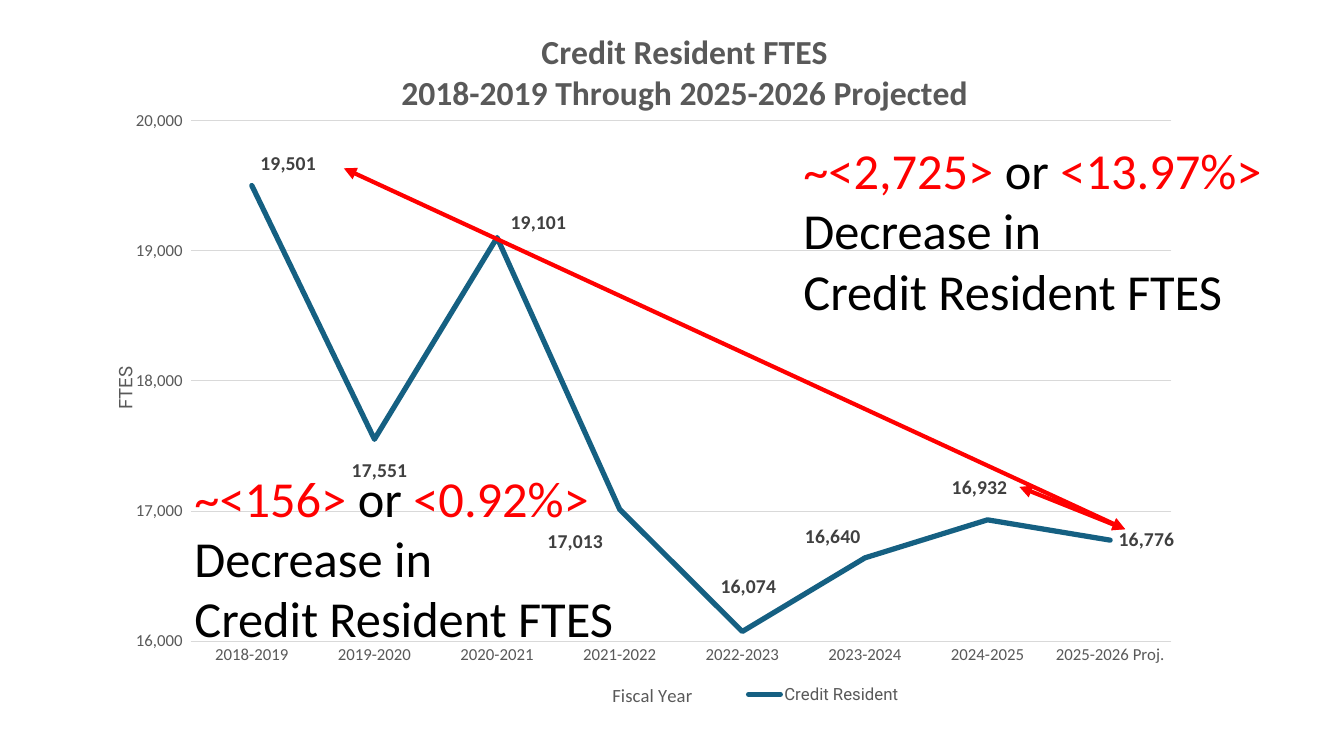
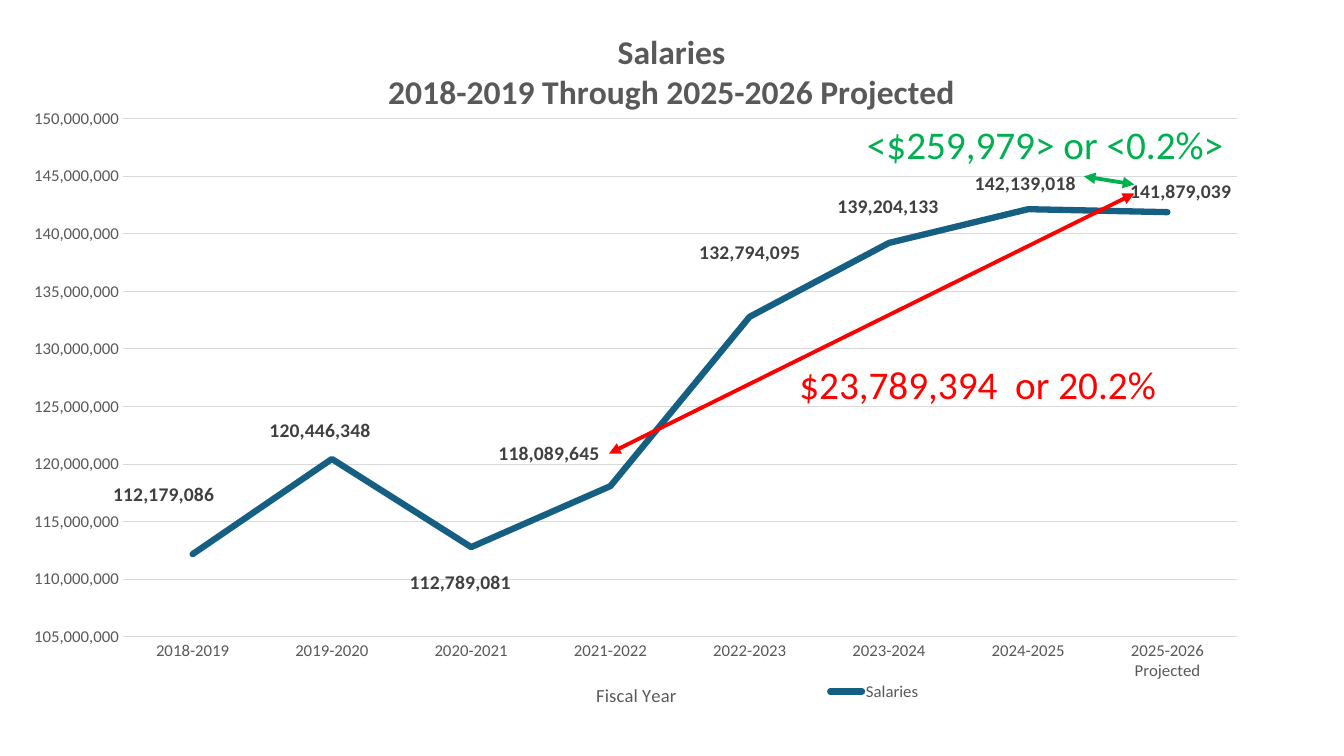
from dataclasses import dataclass

from lxml import etree
from pptx import Presentation
from pptx import util as u
from pptx.chart import data as chart_data
from pptx.dml import color
from pptx.enum import chart as chart_enum, shapes
from pptx.oxml import ns


@dataclass(frozen=True)
class Theme:
    text_font: str = "Calibri"
    chart_font: str = "Roboto"
    series: str = "156082"
    grid: str = "D9D9D9"
    muted: str = "595959"
    label: str = "404040"
    black: str = "000000"
    red: str = "FF0000"
    green: str = "00B050"
    title_size: float = 24
    axis_title_size: float = 13.3
    axis_size: float = 12
    label_size: float = 14


THEME = Theme()
YEARS = [f"{year}-{year + 1}" for year in range(2018, 2025)]
PERIOD = "2018-2019 Through 2025-2026 Projected"


def style_font(font, size, hex_color, name=THEME.text_font, bold=False):
    font.size, font.name, font.bold = u.Pt(size), name, bold
    font.color.rgb = color.RGBColor.from_string(hex_color)


def style_line(line, hex_color, width):
    line.color.rgb = color.RGBColor.from_string(hex_color)
    line.width = u.Pt(width)


def set_layout(parent, **values):
    """Give a chart part a manual layout, in fractions of the chart."""
    for old in parent.findall(ns.qn("c:layout")):
        parent.remove(old)
    layout = etree.Element(ns.qn("c:layout"))
    manual = etree.SubElement(layout, ns.qn("c:manualLayout"))
    for key, value in values.items():
        text = value if isinstance(value, str) else f"{value:.4f}"
        etree.SubElement(manual, ns.qn(f"c:{key}")).set("val", text)
    is_plot = parent.tag == ns.qn("c:plotArea")
    parent.insert(0 if is_plot else 1, layout)


class Deck:
    def __init__(self):
        self.presentation = Presentation()
        self.presentation.slide_width = u.Inches(13.33)
        self.presentation.slide_height = u.Inches(7.5)
        self.slide = None

    def new_slide(self):
        blank = self.presentation.slide_layouts[6]
        self.slide = self.presentation.slides.add_slide(blank)

    def line_chart(self, box, title, categories, name, values, scale, number_format,
                   line_width, label_shifts, places, legend_font=THEME.text_font,
                   value_title=None):
        """Draw the chart; places are in slide inches, label_shifts in inches."""
        source = chart_data.CategoryChartData(number_format=number_format)
        source.categories = categories
        source.add_series(name, values)
        chart = self.slide.shapes.add_chart(
            chart_enum.XL_CHART_TYPE.LINE, *map(u.Inches, box), source).chart
        style_font(chart.font, 10, THEME.black, THEME.chart_font)
        chart.has_title = True
        self.chart_text(chart.chart_title, title, THEME.title_size, bold=True)
        self.axes(chart, scale, number_format, value_title)
        chart.has_legend = True
        chart.legend.position = chart_enum.XL_LEGEND_POSITION.BOTTOM
        chart.legend.include_in_layout = False
        style_font(chart.legend.font, THEME.axis_size, THEME.muted, legend_font)
        self.series(chart, line_width, label_shifts, box)
        self.place_parts(chart, box, places)

    @staticmethod
    def chart_text(owner, lines, size, name=THEME.text_font, bold=False):
        frame = owner.text_frame
        for index, line in enumerate(lines):
            paragraph = frame.add_paragraph() if index else frame.paragraphs[0]
            run = paragraph.add_run()
            run.text = line
            style_font(run.font, size, THEME.muted, name, bold)

    def axes(self, chart, scale, number_format, value_title):
        category, value = chart.category_axis, chart.value_axis
        for axis in (category, value):
            axis.major_tick_mark = chart_enum.XL_TICK_MARK.NONE
            style_font(axis.tick_labels.font, THEME.axis_size, THEME.muted)
        self.chart_text(category.axis_title, ["Fiscal Year"], THEME.axis_title_size)
        style_line(category.format.line, THEME.grid, 0.75)
        value.minimum_scale, value.maximum_scale, value.major_unit = scale
        value.has_major_gridlines = True
        style_line(value.major_gridlines.format.line, THEME.grid, 0.75)
        value.format.line.fill.background()
        value.tick_labels.number_format = number_format
        value.tick_labels.number_format_is_linked = False
        if value_title:
            self.chart_text(value.axis_title, [value_title],
                            THEME.axis_title_size, THEME.chart_font)

    @staticmethod
    def series(chart, line_width, label_shifts, box):
        series = chart.plots[0].series[0]
        series.smooth = False
        series.marker.style = chart_enum.XL_MARKER_STYLE.NONE
        style_line(series.format.line, THEME.series, line_width)
        chart.element.xpath(".//c:ser/c:spPr/a:ln")[0].set("cap", "rnd")
        right = chart_enum.XL_LABEL_POSITION.RIGHT
        labels = series.data_labels
        labels.show_value = True
        labels.position = right
        style_font(labels.font, THEME.label_size, THEME.label, bold=True)
        for index in range(len(label_shifts)):
            label = series.points[index].data_label
            style_font(label.font, THEME.label_size, THEME.label, bold=True)
            label.position = right
        for element, (dx, dy) in zip(chart.element.xpath(".//c:dLbl"), label_shifts):
            set_layout(element, x=dx / box[2], y=dy / box[3])
        for leader_lines in chart.element.xpath(".//c:showLeaderLines"):
            leader_lines.set("val", "0")

    @staticmethod
    def place_parts(chart, box, places):
        left, top, width, height = box
        queries = {"title": "c:chart/c:title", "legend": "c:chart/c:legend",
                   "category": ".//c:catAx/c:title", "value": ".//c:valAx/c:title",
                   "plot": ".//c:plotArea"}
        for part, (x, y, *size) in places.items():
            layout = {"layoutTarget": "inner"} if part == "plot" else {}
            layout.update(xMode="edge", yMode="edge",
                          x=(x - left) / width, y=(y - top) / height)
            if size:
                layout.update(w=size[0] / width, h=size[1] / height)
            set_layout(chart.element.xpath(queries[part])[0], **layout)

    def double_arrow(self, start, end, hex_color, width):
        arrow = self.slide.shapes.add_connector(
            shapes.MSO_CONNECTOR.STRAIGHT, *map(u.Inches, (*start, *end)))
        style_line(arrow.line, hex_color, width)
        properties = arrow.element.spPr
        line = properties.find(ns.qn("a:ln"))
        for end_name in ("headEnd", "tailEnd"):
            etree.SubElement(line, ns.qn(f"a:{end_name}")).set("type", "triangle")
        etree.SubElement(properties, ns.qn("a:effectLst"))

    def note(self, box, size, paragraphs):
        """Add a text box; each paragraph is a list of (text, colour) runs."""
        frame = self.slide.shapes.add_textbox(*map(u.Inches, box)).text_frame
        frame.word_wrap = False
        for index, runs in enumerate(paragraphs):
            paragraph = frame.add_paragraph() if index else frame.paragraphs[0]
            for text, hex_color in runs:
                run = paragraph.add_run()
                run.text = text
                style_font(run.font, size, hex_color)

    def decrease_note(self, box, amount, percent):
        self.note(box, 36, [
            [(f"~<{amount}> ", THEME.red), ("or ", THEME.black),
             (f"<{percent}>", THEME.red)],
            [("Decrease in", THEME.black)],
            [("Credit Resident FTES", THEME.black)]])


def add_enrollment_slide(deck):
    deck.new_slide()
    deck.line_chart(
        (1.08, 0.08, 11.42, 7), ["Credit Resident FTES", PERIOD],
        YEARS + ["2025-2026 Proj."], "Credit Resident",
        [19501, 17551, 19101, 17013, 16074, 16640, 16932, 16776],
        (16000, 20000, 1000), "_(* #,##0_)", 3.75,
        [(0, -0.22), (-0.31, 0.31), (0.05, -0.15), (-0.8, 0.32),
         (-0.3, -0.45), (-0.68, -0.21), (-0.44, -0.32)],
        {"title": (3.95, 0.28), "plot": (1.89, 1.2, 9.73, 5.18),
         "category": (6.04, 6.76), "value": (1.08, 3.61), "legend": (7.37, 6.77)},
        legend_font=THEME.chart_font, value_title="FTES")
    latest = (11.16, 5.25)
    deck.double_arrow((3.41, 1.67), latest, THEME.red, 3)
    deck.decrease_note((7.87, 1.33, 4.9, 1.92), "2,725", "13.97%")
    deck.double_arrow((10.11, 4.83), latest, THEME.red, 3)
    deck.decrease_note((1.83, 4.58, 4.39, 1.92), "156", "0.92%")


def add_salaries_slide(deck):
    deck.new_slide()
    deck.line_chart(
        (0.16, 0.08, 12.98, 7), ["Salaries", PERIOD],
        YEARS + ["2025-2026 Projected"], "Salaries",
        [112179086, 120446348, 112789081, 118089645,
         132794095, 139204133, 142139018, 141879039],
        (105000000, 150000000, 5000000), "#,##0", 4.5,
        [(-0.83, -0.6), (-0.66, -0.28), (-0.65, 0.36), (-1.15, -0.33),
         (-0.54, -0.64), (-0.55, -0.36), (-0.57, -0.26), (-0.41, -0.2)],
        {"title": (3.82, 0.28), "plot": (1.22, 1.19, 11.05, 5.2),
         "category": (5.88, 6.82), "legend": (8.18, 6.8)})
    deck.double_arrow((6.04, 4.5), (11.25, 1.92), THEME.red, 2.75)
    deck.note((7.83, 3.53, 3.79, 0.57), 28, [[("$23,789,394  or 20.2%", THEME.red)]])
    deck.double_arrow((10.75, 1.75), (11.25, 1.83), THEME.green, 2.75)
    deck.note((8.5, 1.14, 3.79, 0.57), 28, [[("<$259,979> or <0.2%>", THEME.green)]])


def main():
    deck = Deck()
    add_enrollment_slide(deck)
    add_salaries_slide(deck)
    deck.presentation.save("out.pptx")


if __name__ == "__main__":
    main()
